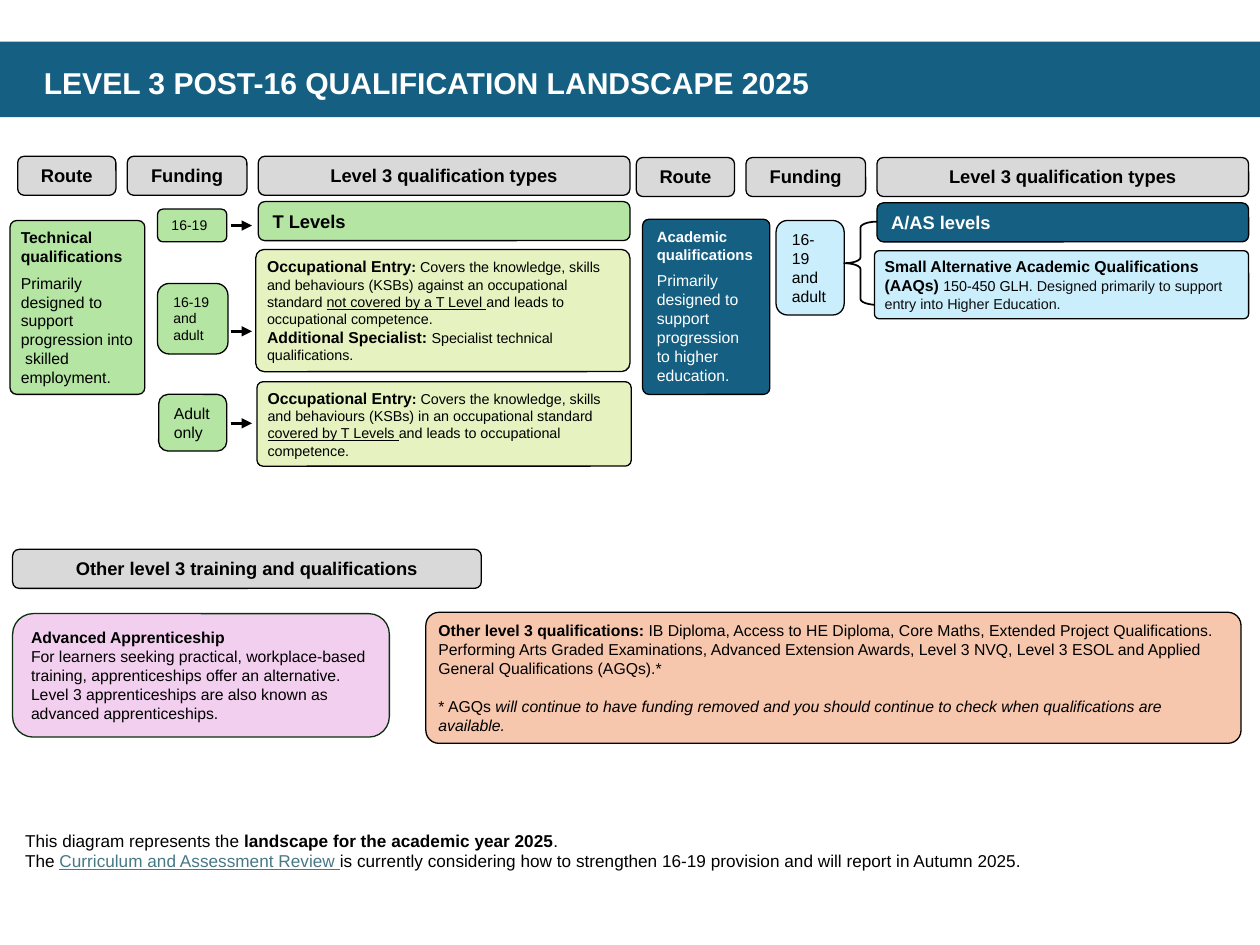
from lxml import etree
from pptx import Presentation
from pptx.dml.color import RGBColor
from pptx.enum.shapes import MSO_CONNECTOR, MSO_SHAPE
from pptx.enum.text import MSO_ANCHOR, PP_ALIGN
from pptx.oxml.ns import qn
from pptx.util import Inches, Pt

RECT, ROUND, BRACE = MSO_SHAPE.RECTANGLE, MSO_SHAPE.ROUNDED_RECTANGLE, MSO_SHAPE.LEFT_BRACE
STRAIGHT = MSO_CONNECTOR.STRAIGHT
TOP, MIDDLE = MSO_ANCHOR.TOP, MSO_ANCHOR.MIDDLE
LEFT, CENTER = PP_ALIGN.LEFT, PP_ALIGN.CENTER

COLORS = {
    "black": "000000", "ink": "0D0D0D", "white": "FFFFFF", "teal": "156082",
    "gray": "D9D9D9", "green": "B4E5A2", "lime": "E6F2C0", "sky": "CAEEFB",
    "pink": "F2CFEE", "forest": "0B2F10", "peach": "F6C6AD", "link": "467886",
}
COLS, ROWS = 100, 75
WIDE, TIGHT = (1, 0.5), (0.7, 0.4)  # text insets in grid units
HEAD_SIZE, BODY_SIZE, SMALL_SIZE = 10.5, 9, 8.2
BOLD = {"bold": True}
SMALL = {"size": SMALL_SIZE}
SMALL_BOLD = {"size": SMALL_SIZE, "bold": True}
SMALL_LINK = {"size": SMALL_SIZE, "underline": True}


class Board:
    """Draws styled elements on one slide; lengths are grid columns and rows."""

    def __init__(self, prs):
        self.s = prs.slides.add_slide(prs.slide_layouts[6])
        self.col = prs.slide_width / COLS
        self.row = prs.slide_height / ROWS

    def place(self, x, y, w, h):
        return (round(x * self.col), round(y * self.row),
                round(w * self.col), round(h * self.row))

    def color(self, name):
        return RGBColor.from_string(COLORS[name])

    def style(self, font, size=None, color=None, bold=None, italic=None, underline=None):
        if size:
            font.size = Pt(size)
        if color:
            font.color.rgb = self.color(color)
        font.bold, font.italic, font.underline = bold, italic, underline

    def set_text(self, sp, paragraphs, size=BODY_SIZE, color="black", bold=None,
                 align=LEFT, anchor=TOP, inset=WIDE, after=0, gap=0):
        """A paragraph is a string or a list of (text, run style) pairs."""
        tf = sp.text_frame
        tf.word_wrap, tf.vertical_anchor = True, anchor
        tf.margin_left = tf.margin_right = round(inset[0] * self.col)
        tf.margin_top = tf.margin_bottom = round(inset[1] * self.row)
        for i, runs in enumerate(paragraphs):
            p = tf.paragraphs[0] if i == 0 else tf.add_paragraph()
            p.alignment, p.space_after = align, Pt(after)
            p.space_before = Pt(gap if i else 0)
            p.font.name = "Arial"
            self.style(p.font, size, color, bold)
            for text, look in ([(runs, {})] if isinstance(runs, str) else runs):
                r = p.add_run()
                r.text = text
                if look:
                    self.style(r.font, **look)

    def shape(self, kind, at, fill=None, line=None, width=0.75, adj=None):
        sp = self.s.shapes.add_shape(kind, *self.place(*at))
        sp.shadow.inherit = False
        if fill:
            sp.fill.solid()
            sp.fill.fore_color.rgb = self.color(fill)
        else:
            sp.fill.background()
        if line:
            sp.line.color.rgb = self.color(line)
            sp.line.width = Pt(width)
        else:
            sp.line.fill.background()
        if adj is not None:
            sp.adjustments[0] = adj
        return sp

    def box(self, at, fill, paragraphs, line="black", adj=None, **text):
        self.set_text(self.shape(ROUND, at, fill, line, adj=adj), paragraphs, **text)

    def heading(self, at, text):
        self.box(at, "gray", [text], size=HEAD_SIZE, bold=True, align=CENTER)

    def text(self, at, paragraphs, **text):
        self.set_text(self.s.shapes.add_textbox(*self.place(*at)), paragraphs, **text)

    def arrow(self, x1, x2, y):
        c = self.s.shapes.add_connector(STRAIGHT, *self.place(x1, y, x2, y))
        c.line.color.rgb = self.color("black")
        c.line.width = Pt(1.5)
        spPr = c._element.spPr
        etree.SubElement(spPr.get_or_add_ln(), qn("a:tailEnd"), type="triangle")
        etree.SubElement(spPr, qn("a:effectLst"))


def main():
    prs = Presentation()
    prs.slide_width, prs.slide_height = Inches(10), Inches(7.5)
    b = Board(prs)

    # Title band
    for y in (4.8, 3.3):
        b.shape(RECT, (0, y, COLS, 4.5), "teal")
    b.text((2.5, 4.6, 94.3, 3.9), ["LEVEL 3 POST-16 QUALIFICATION LANDSCAPE 2025"],
           size=17.2, color="white", bold=True, anchor=MIDDLE)

    # Column headings and top qualification of both halves
    headings = [("Route", 1.4, 7.8), ("Funding", 10.1, 9.5),
                ("Level 3 qualification types", 20.5, 29.5)]
    halves = [(0, 0, "T Levels", "green", "black"),
              (49.1, 0.1, "A/AS levels", "teal", "white")]
    for dx, dy, name, fill, color in halves:
        for label, x, w in headings:
            b.heading((x + dx, 12.4 + dy, w, 3.1), label)
        b.box((20.5 + dx, 16 + dy, 29.5, 3.1), fill, [name],
              size=HEAD_SIZE, color=color, bold=True, anchor=MIDDLE)

    # Technical route
    b.box((0.8, 17.5, 10.7, 13.8), "green", [
        [("Technical qualifications", BOLD)],
        "Primarily designed to support progression into  skilled employment.",
    ], adj=0.05, inset=TIGHT, after=4.5)
    funding = [("16-19", (12.5, 16.6, 5.5, 2.6), 8, 17.9),
               ("16-19 and adult", (12.5, 22.5, 5.6, 5.6), 8, 26.3),
               ("Adult only", (12.6, 31.3, 5.4, 4.5), 9, 33.6)]
    for label, at, size, arrow_y in funding:
        b.box(at, "green", [label], size=size)
        b.arrow(18.3, 20, arrow_y)

    # Technical qualification types
    def occupational(scope, link):
        return [("Occupational Entry", BOLD), (": ", SMALL_BOLD),
                ("Covers the knowledge, skills and behaviours (KSBs) "
                 f"{scope} an occupational standard ", SMALL),
                (link, SMALL_LINK),
                ("and leads to occupational competence.", SMALL)]

    b.box((20.3, 19.8, 29.7, 9.7), "lime", [
        occupational("against", "not covered by a T Level "),
        [("Additional Specialist: ", BOLD),
         ("Specialist technical qualifications.", SMALL)],
    ], adj=0.07, inset=TIGHT)
    b.box((20.4, 30.3, 29.7, 6.7), "lime",
          [occupational("in", "covered by T Levels ")], adj=0.07, inset=TIGHT)

    # Academic route
    b.box((51, 17.4, 10.1, 13.9), "teal", [
        [("Academic qualifications", {"size": 8.5, "bold": True})],
        "Primarily designed to support progression to higher education.",
    ], color="white", adj=0.05, after=4.5)
    b.box((61.6, 17.5, 5.4, 7.5), "sky", ["16-19 and adult"])
    b.shape(BRACE, (67, 17.6, 2.6, 6.6), line="black", width=1, adj=0.18)
    b.box((69.4, 19.9, 29.7, 5.4), "sky", [[
        ("Small Alternative Academic Qualifications (AAQs) ", BOLD),
        ("150-450 GLH. ", SMALL),
        ("Designed primarily to support entry into Higher Education.",
         {"size": SMALL_SIZE, "color": "ink"}),
    ]], adj=0.07, inset=TIGHT)

    # Other training and qualifications
    b.heading((1, 43.6, 37.2, 3.1), "Other level 3 training and qualifications")
    b.box((1, 48.7, 29.9, 9.8), "pink", [
        [("Advanced Apprenticeship", BOLD)],
        "For learners seeking practical, workplace-based training, apprenticeships "
        "offer an alternative. Level 3 apprenticeships are also known as "
        "advanced apprenticeships.",
    ], line="forest", anchor=MIDDLE)
    b.box((33.8, 48.6, 64.7, 10.4), "peach", [
        [("Other level 3 qualifications: ", BOLD),
         ("IB Diploma, Access to HE Diploma, Core Maths, Extended Project "
          "Qualifications. Performing Arts Graded Examinations, Advanced Extension "
          "Awards, Level 3 NVQ, Level 3 ESOL and Applied General Qualifications "
          "(AGQs).*", {})],
        [("* AGQs", {}),
         (" will continue to have funding removed and you should continue to check "
          "when qualifications are available.", {"italic": True})],
    ], adj=0.1, inset=TIGHT, gap=10.5)

    # Closing note
    b.text((1, 65.4, 92.9, 4.3), [
        [("This diagram represents the ", {}),
         ("landscape for the academic year 2025", BOLD), (".", {})],
        [("The ", {}),
         ("Curriculum and Assessment Review ", {"color": "link", "underline": True}),
         ("is currently considering how to strengthen 16-19 provision and will "
          "report in Autumn 2025.", {})],
    ], size=9.8)

    prs.save("out.pptx")


if __name__ == "__main__":
    main()
